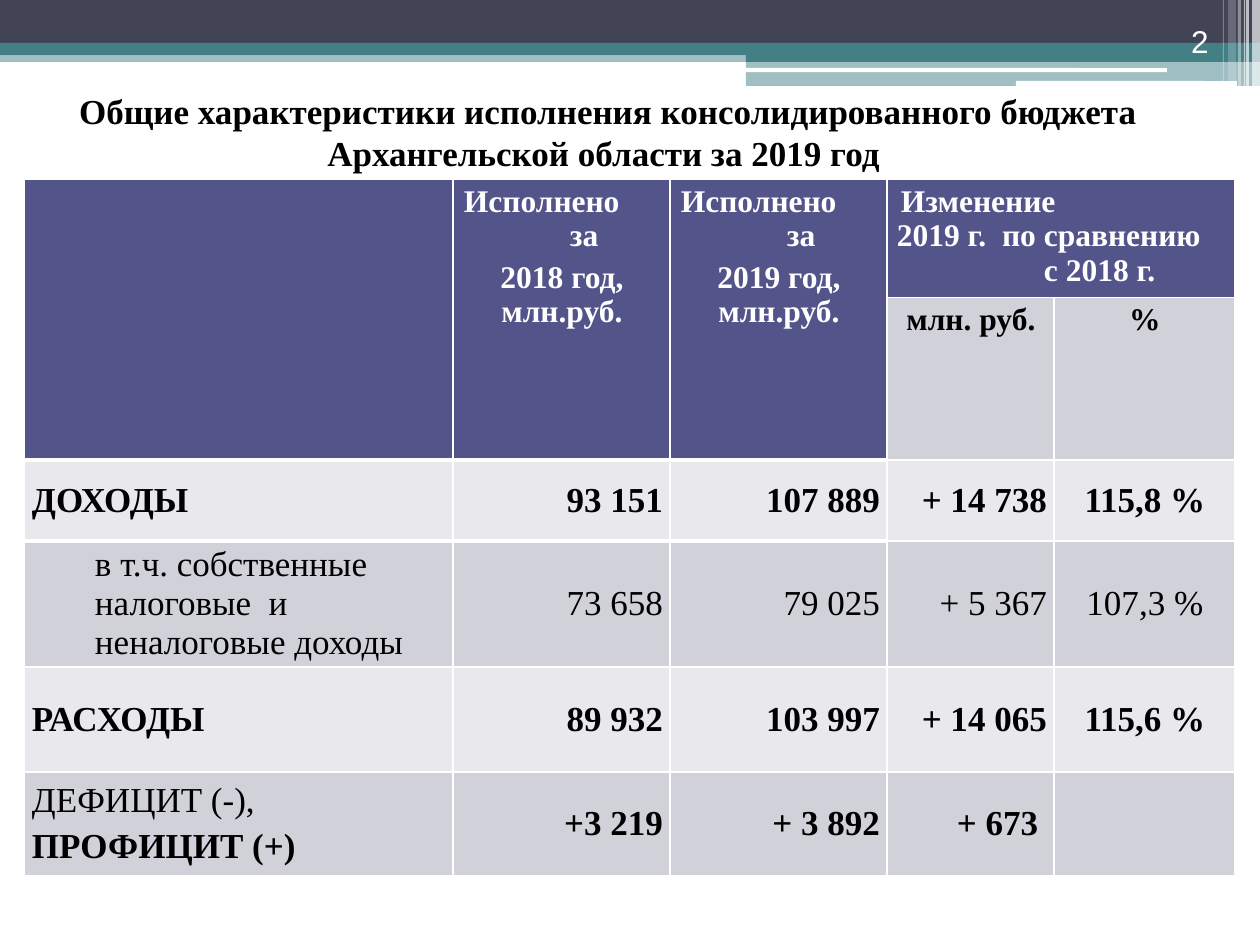
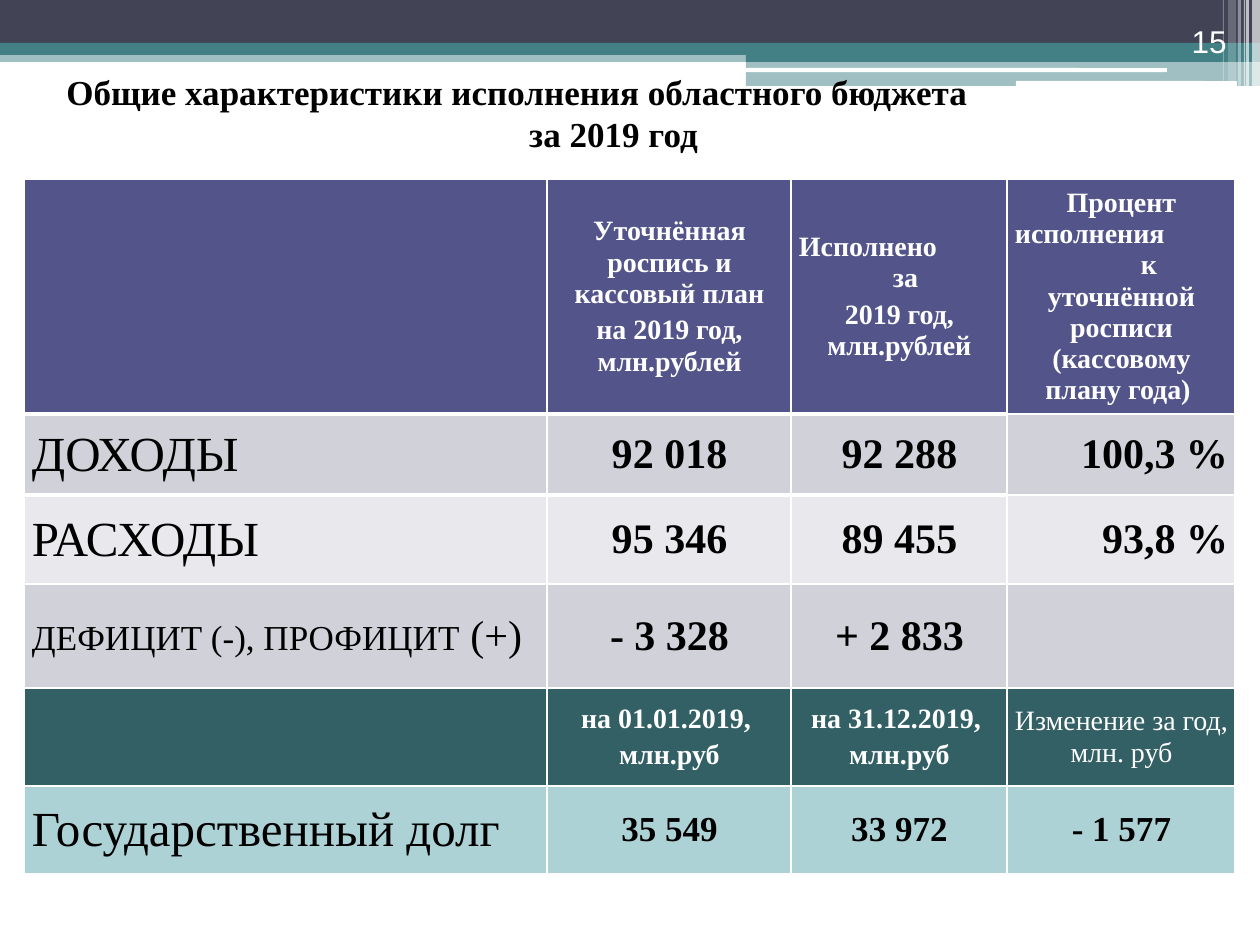
from dataclasses import dataclass

from lxml.etree import SubElement
from pptx import Presentation
from pptx.dml.color import RGBColor
from pptx.enum.shapes import MSO_SHAPE as Preset
from pptx.enum.text import MSO_ANCHOR as Anchor, PP_ALIGN as Align
from pptx.oxml.ns import qn
from pptx.util import Emu, Pt

EMU_PER_PX = 914400 / 126


@dataclass(frozen=True)
class Theme:
    white: str = "FFFFFF"
    black: str = "000000"
    slate: str = "424456"
    teal: str = "438086"
    header: str = "53548A"
    row_dark: str = "D1D1DA"
    row_light: str = "E9E9ED"
    debt_header: str = "326065"
    debt_row: str = "ADD2D6"
    serif: str = "Times New Roman"
    sans: str = "Arial"
    small: int = 16
    medium: int = 18
    body: int = 20
    figure: int = 24
    label: int = 28
    thin: float = 1
    thick: float = 2.25


THEME = Theme()


@dataclass(frozen=True)
class Line:
    runs: tuple
    align: Align = Align.CENTER
    indent: int = 0
    gap: bool = False


@dataclass(frozen=True)
class Cell:
    lines: tuple = ()
    fill: str = THEME.row_dark
    color: str = THEME.black
    anchor: Anchor = Anchor.MIDDLE


def px(length):
    return Emu(round(length * EMU_PER_PX))


def line(text, size, bold=True, align=Align.CENTER, **options):
    return Line(((text, size, bold),), align, **options)


def value_cell(text, size, fill, bold=True, align=Align.CENTER):
    return Cell((line(text, size, bold, align),), fill)


def empty_cell(fill):
    return Cell((), fill)


def header_cell(*lines, anchor=Anchor.MIDDLE):
    return Cell(lines, THEME.header, THEME.white, anchor)


def write_lines(text_frame, lines, color, font):
    for index, item in enumerate(lines):
        paragraph = text_frame.paragraphs[0] if index == 0 else text_frame.add_paragraph()
        paragraph.alignment = item.align
        if item.gap:
            paragraph.space_before = Pt(item.runs[0][1] * 0.2)
        if item.indent:
            properties = paragraph._p.get_or_add_pPr()
            properties.set("marL", str(px(item.indent)))
            properties.set("indent", "0")
        for text, size, bold in item.runs:
            run = paragraph.add_run()
            run.text = text
            run.font.name = font
            run.font.size = Pt(size)
            run.font.bold = bold
            run.font.color.rgb = RGBColor.from_string(color)


def add_band(slide, box, color, opacity=100, preset=Preset.RECTANGLE):
    shape = slide.shapes.add_shape(preset, *map(px, box))
    shape.shadow.inherit = False
    shape.line.fill.background()
    shape.fill.solid()
    shape.fill.fore_color.rgb = RGBColor.from_string(color)
    if opacity < 100:
        color_element = shape.fill._xPr.find(qn("a:solidFill"))[0]
        SubElement(color_element, qn("a:alpha")).set("val", str(opacity * 1000))


def add_header_bands(slide, width):
    step = 746
    add_band(slide, (0, 50, width, 12), THEME.teal, 50)
    add_band(slide, (0, 0, width, 43), THEME.slate)
    add_band(slide, (0, 43, width, 12), THEME.teal)
    add_band(slide, (step, 49, width - step, 13), THEME.teal)
    add_band(slide, (step, 61, width - step, 25), THEME.teal, 50)
    add_band(slide, (step - 1, 68, 422, 4), THEME.white, preset=Preset.ROUNDED_RECTANGLE)
    add_band(slide, (1016, 81, 221, 5), THEME.white, preset=Preset.ROUNDED_RECTANGLE)
    stripes = ((1252, 8, 86, 65), (1246, 3, 86, 65), (1244, 1, 86, 60),
               (1238, 3, 86, 40), (1228, 8, 81, 20), (1223, 1, 81, 30))
    for left, stripe_width, height, opacity in stripes:
        add_band(slide, (left, 0, stripe_width, height), THEME.white, opacity)


def add_text_box(slide, box, lines, anchor, color, font):
    text_frame = slide.shapes.add_textbox(*map(px, box)).text_frame
    text_frame.word_wrap = True
    text_frame.vertical_anchor = anchor
    write_lines(text_frame, lines, color, font)


def add_frame(slide, width, title_box, title_lines, number_box, number):
    add_header_bands(slide, width)
    add_text_box(slide, title_box, title_lines, Anchor.MIDDLE, THEME.black, THEME.serif)
    add_text_box(slide, number_box, [line(number, THEME.medium, False, Align.RIGHT)],
                 Anchor.BOTTOM, THEME.white, THEME.sans)


def set_borders(cell, top, bottom):
    properties = cell._tc.get_or_add_tcPr()
    sides = (("lnL", THEME.thin), ("lnR", THEME.thin), ("lnT", top), ("lnB", bottom))
    for position, (side, width) in enumerate(sides):
        border = properties.makeelement(qn(f"a:{side}"), {"w": str(Pt(width))})
        fill = SubElement(border, qn("a:solidFill"))
        SubElement(fill, qn("a:srgbClr")).set("val", THEME.white)
        properties.insert(position, border)


def add_budget_table(slide, origin, columns, heights, rows, merges=(), header_rows=1):
    box = (*origin, sum(columns), sum(heights))
    table = slide.shapes.add_table(len(heights), len(columns), *map(px, box)).table
    table.first_row = False
    table.horz_banding = False
    for column, width in zip(table.columns, columns):
        column.width = px(width)
    for table_row, height in zip(table.rows, heights):
        table_row.height = px(height)
    for first, last in merges:
        table.cell(*first).merge(table.cell(*last))
    thick_edges = (header_rows, header_rows + 1)
    for row_index, row in enumerate(rows):
        for column_index, content in enumerate(row):
            cell = table.cell(row_index, column_index)
            cell.fill.solid()
            cell.fill.fore_color.rgb = RGBColor.from_string(content.fill)
            cell.vertical_anchor = content.anchor
            cell.margin_left, cell.margin_right = px(8), px(7)
            cell.margin_top = px(5 if content.anchor == Anchor.TOP else 0)
            cell.margin_bottom = px(0)
            write_lines(cell.text_frame, content.lines, content.color, THEME.serif)
            edges = thick_edges if column_index < 3 else ()
            top, bottom = (THEME.thick if edge in edges else THEME.thin
                           for edge in (row_index, row_index + 1))
            set_borders(cell, top, bottom)


def executed_header(year, unit, size, indents, anchor):
    first, second = indents
    return header_cell(
        line("Исполнено", size, align=Align.LEFT, indent=first),
        line("за", size, align=Align.LEFT, indent=second),
        line(f"{year} год, {unit}", size, gap=True), anchor=anchor)


def build_consolidated_slide(slide, width):
    size, body = THEME.medium, THEME.body
    title = "Общие характеристики исполнения консолидированного бюджета Архангельской области за 2019 год "
    add_frame(slide, width, (29, 88, 1158, 88), [line(title, body)],
              (1133, 0, 88, 66), "2")
    blank = empty_cell(THEME.header)
    executed = [executed_header(year, "млн.руб.", size, (3, 109), Anchor.TOP)
                for year in (2018, 2019)]
    change = header_cell(
        line("Изменение", size, align=Align.LEFT, indent=6),
        line("2019 г.  по сравнению", size, align=Align.LEFT, indent=2),
        line("с 2018 г.", size, align=Align.LEFT, indent=149), anchor=Anchor.TOP)
    units = [Cell((line(text, size),), anchor=Anchor.TOP) for text in ("млн. руб.", "%")]

    def figures(label_lines, values, fill, bold=True):
        aligns = (Align.RIGHT,) * 3 + (Align.CENTER,)
        cells = [value_cell(text, body, fill, bold, align) if text else empty_cell(fill)
                 for text, align in zip(values, aligns)]
        return [Cell(label_lines, fill), *cells]

    rows = [
        [blank, *executed, change, blank],
        [blank, blank, blank, *units],
        figures((line("ДОХОДЫ", body, align=Align.LEFT),),
                ("93 151", "107 889", "+ 14 738", "115,8 %"), THEME.row_light),
        figures((line("в т.ч. собственные налоговые  и неналоговые доходы", body, False,
                      Align.LEFT, indent=63),),
                ("73 658", "79 025", "+ 5 367", "107,3 %"), THEME.row_dark, False),
        figures((line("РАСХОДЫ", body, align=Align.LEFT),),
                ("89 932", "103 997", "+ 14 065", "115,6 %"), THEME.row_light),
        figures((line("ДЕФИЦИТ (-),", body, False, Align.LEFT),
                 line("ПРОФИЦИТ (+)", body, align=Align.LEFT, gap=True)),
                ("+3 219", "+ 3 892", "+ 673 ", ""), THEME.row_dark),
    ]
    merges = [((0, column), (1, column)) for column in range(3)] + [((0, 3), (0, 4))]
    add_budget_table(slide, (24, 179), (429, 217, 217, 167, 181),
                     (116, 155, 81, 117, 105, 104), rows, merges, header_rows=2)


def build_regional_slide(slide, width):
    size, body = THEME.small, THEME.body
    add_frame(slide, width, (39, 69, 1158, 88),
              [line("Общие характеристики исполнения областного бюджета", body,
                    align=Align.LEFT, indent=15),
               line("за 2019 год ", body)],
              (1142, 0, 97, 66), "15")
    plan = header_cell(line("Уточнённая роспись и кассовый план", size),
                       line("на 2019 год, млн.рублей", size, gap=True))
    executed = executed_header(2019, "млн.рублей", size, (0, 94), Anchor.MIDDLE)
    percent = header_cell(
        line("Процент", size),
        line("исполнения", size, align=Align.LEFT),
        line("к", size, align=Align.LEFT, indent=126),
        line("уточнённой росписи (кассовому плану года) ", size))

    def figures(label_runs, values, fill, value_size=THEME.figure, last_align=Align.RIGHT):
        aligns = (Align.CENTER, Align.CENTER, last_align)
        cells = [value_cell(text, value_size, fill, align=align) if text else empty_cell(fill)
                 for text, align in zip(values, aligns)]
        return [Cell((Line(label_runs, Align.LEFT),), fill), *cells]

    def label(text):
        return ((text, THEME.label, False),)

    debt_dates = [Cell((line(f"на {date}.2019, ", size), line("млн.руб", size, gap=True)),
                       THEME.debt_header, THEME.white) for date in ("01.01", "31.12")]
    debt_change = Cell((line("Изменение за год, млн. руб", size, False),),
                       THEME.debt_header, THEME.white)
    rows = [
        [empty_cell(THEME.header), plan, executed, percent],
        figures(label("ДОХОДЫ"), ("92 018", "92 288", "100,3 %"), THEME.row_dark),
        figures(label("РАСХОДЫ"), ("95 346", "89 455", "93,8 %"), THEME.row_light),
        figures((("ДЕФИЦИТ (-), ПРОФИЦИТ", body, False), (" (+)", THEME.figure, False)),
                ("- 3 328", "+ 2 833", ""), THEME.row_dark),
        [empty_cell(THEME.debt_header), *debt_dates, debt_change],
        figures(label("Государственный долг"), ("35 549", "33 972", "- 1 577"),
                THEME.debt_row, body, Align.CENTER),
    ]
    add_budget_table(slide, (24, 179), (523, 244, 216, 228),
                     (228, 81, 89, 104, 98, 88), rows)


def main():
    width, height = 1260, 945
    presentation = Presentation()
    presentation.slide_width = px(width)
    presentation.slide_height = px(height)
    blank_layout = presentation.slide_layouts[6]
    for build_slide in (build_consolidated_slide, build_regional_slide):
        build_slide(presentation.slides.add_slide(blank_layout), width)
    presentation.save("out.pptx")


if __name__ == "__main__":
    main()
